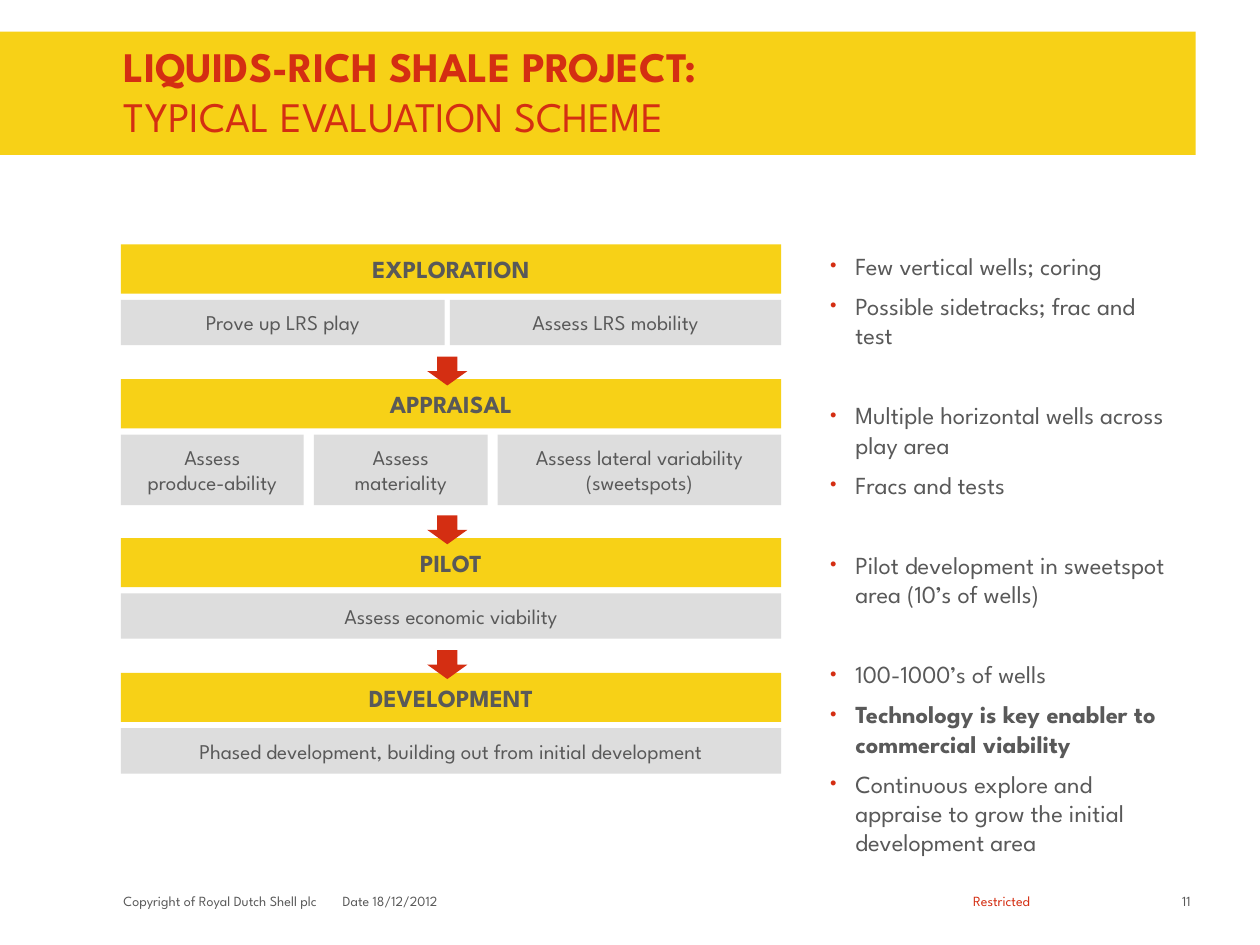
import lxml.etree
import pptx
import pptx.dml.color
import pptx.enum.shapes
import pptx.enum.text
import pptx.oxml.ns
import pptx.util

YELLOW = pptx.dml.color.RGBColor(0xF7, 0xD1, 0x17)
RED = pptx.dml.color.RGBColor(0xD4, 0x2E, 0x12)
SILVER = pptx.dml.color.RGBColor(0xDD, 0xDD, 0xDD)
GREY = pptx.dml.color.RGBColor(0x59, 0x59, 0x59)
SHAPE = pptx.enum.shapes.MSO_SHAPE
ALIGN = pptx.enum.text.PP_ALIGN
ANCHOR = pptx.enum.text.MSO_ANCHOR

LEFT, WIDTH = 9.6, 52.4
HEADER_ROWS, STEP_OFFSET = 3.9, 4.4
STAGES = [
    ("EXPLORATION", 19.4, 3.6, [
        ("Prove up LRS play", LEFT, 25.7),
        ("Assess LRS mobility", 35.7, 26.3)]),
    ("APPRAISAL", 30.1, 5.6, [
        ("Assess\nproduce-ability", LEFT, 14.5),
        ("Assess materiality", 24.9, 13.8),
        ("Assess lateral variability (sweetspots)", 39.5, 22.5)]),
    ("PILOT", 42.7, 3.6, [("Assess economic viability", LEFT, WIDTH)]),
    ("DEVELOPMENT", 53.4, 3.6, [
        ("Phased development, building out from initial development", LEFT, WIDTH)]),
]
NOTES = [
    ["Few vertical wells; coring", "Possible sidetracks; frac and test"],
    ["Multiple horizontal wells across play area", "Fracs and tests"],
    ["Pilot development in sweetspot area (10’s of wells)"],
    ["100-1000’s of wells", "Technology is key enabler to commercial viability",
     "Continuous explore and appraise to grow the initial development area"],
]
KEY_NOTE = "Technology is key enabler to commercial viability"
FOOTERS = [
    ("Copyright of Royal Dutch Shell plc", 9.8, 15.9, GREY, ALIGN.LEFT),
    ("Date 18/12/2012", 27.2, 9, GREY, ALIGN.LEFT),
    ("Restricted", 73.6, 11.8, RED, ALIGN.CENTER),
    ("11", 91.6, 2.9, GREY, ALIGN.RIGHT),
]


class SlideBuilder:
    """Draws styled elements on one slide, measured on a grid of 100 columns by 75 rows."""

    typeface = "League Spartan"

    def __init__(self, deck):
        self.deck = deck
        self.page = deck.slides.add_slide(deck.slide_layouts[6])

    def place(self, left, top, width, height):
        column, row = self.deck.slide_width / 100, self.deck.slide_height / 75
        return [int(length) for length in
                (left * column, top * row, width * column, height * row)]

    def style(self, font, size, color, bold=False):
        font.name, font.size, font.bold = self.typeface, pptx.util.Pt(size), bold
        font.color.rgb = color

    def frame(self, box, horizontal=0, vertical=0):
        frame = box.text_frame
        frame.word_wrap = True
        frame.margin_left = frame.margin_right = pptx.util.Inches(horizontal)
        frame.margin_top = frame.margin_bottom = pptx.util.Inches(vertical)
        return frame

    def shape(self, kind, area, color):
        shape = self.page.shapes.add_shape(kind, *self.place(*area))
        shape.shadow.inherit = False
        shape.fill.solid()
        shape.fill.fore_color.rgb = color
        shape.line.fill.background()
        return shape

    def block(self, text, area, color, size, bold=False):
        frame = self.frame(self.shape(SHAPE.RECTANGLE, area, color), 0.16, 0.08)
        frame.vertical_anchor = ANCHOR.MIDDLE
        frame.text = text
        for para in frame.paragraphs:
            para.alignment = ALIGN.CENTER
            self.style(para.font, size, GREY, bold)

    def title(self, heading, subheading, area):
        box = self.page.shapes.add_textbox(*self.place(*area))
        para = self.frame(box).paragraphs[0]
        for text, bold in ((heading, True), (subheading, False)):
            if para.runs:
                para.add_line_break()
            span = para.add_run()
            span.text = text
            self.style(span.font, 24, RED, bold)

    def label(self, text, area, color, alignment):
        box = self.page.shapes.add_textbox(*self.place(*area))
        frame = self.frame(box)
        frame.word_wrap = False
        para = frame.paragraphs[0]
        para.text, para.alignment = text, alignment
        self.style(para.font, 8, color)

    def bullet(self, para):
        properties = para._p.get_or_add_pPr()
        indent = pptx.util.Inches(0.2)
        properties.set("marL", str(indent))
        properties.set("indent", str(-indent))
        name = pptx.oxml.ns.qn
        tint = lxml.etree.SubElement(properties, name("a:buClr"))
        lxml.etree.SubElement(tint, name("a:srgbClr"), val=str(RED))
        lxml.etree.SubElement(properties, name("a:buSzPct"), val="75000")
        lxml.etree.SubElement(properties, name("a:buFont"), typeface="Arial")
        lxml.etree.SubElement(properties, name("a:buChar"), char="•")

    def notes(self, groups, area):
        box = self.page.shapes.add_textbox(*self.place(*area))
        frame = self.frame(box, 0.1, 0.05)
        para = None
        for group in groups:
            for text in group:
                para = frame.add_paragraph() if para else frame.paragraphs[0]
                para.text = text
                self.bullet(para)
                para.space_after = pptx.util.Pt(29 if text == group[-1] else 6)
                self.style(para.font, 14, GREY, text == KEY_NOTE)


def main():
    deck = pptx.Presentation()
    deck.slide_width, deck.slide_height = pptx.util.Inches(10), pptx.util.Inches(7.5)
    slide = SlideBuilder(deck)
    slide.shape(SHAPE.RECTANGLE, (0, 2.5, 94.9, 9.8), YELLOW)
    slide.title("LIQUIDS-RICH SHALE PROJECT:", "TYPICAL EVALUATION SCHEME",
                (9.8, 3.2, 84.2, 8.1))
    for index, (name, top, step_rows, steps) in enumerate(STAGES):
        slide.block(name, (LEFT, top, WIDTH, HEADER_ROWS), YELLOW, 14, True)
        for text, left, width in steps:
            slide.block(text, (left, top + STEP_OFFSET, width, step_rows), SILVER, 12)
        if index:
            slide.shape(SHAPE.DOWN_ARROW, (33.9, top - 1.8, 3.2, 2.3), RED)
    slide.notes(NOTES, (64.9, 19.4, 29.2, 49.5))
    for text, left, width, color, alignment in FOOTERS:
        slide.label(text, (left, 70.8, width, 1.9), color, alignment)
    deck.save("out.pptx")


if __name__ == "__main__":
    main()
